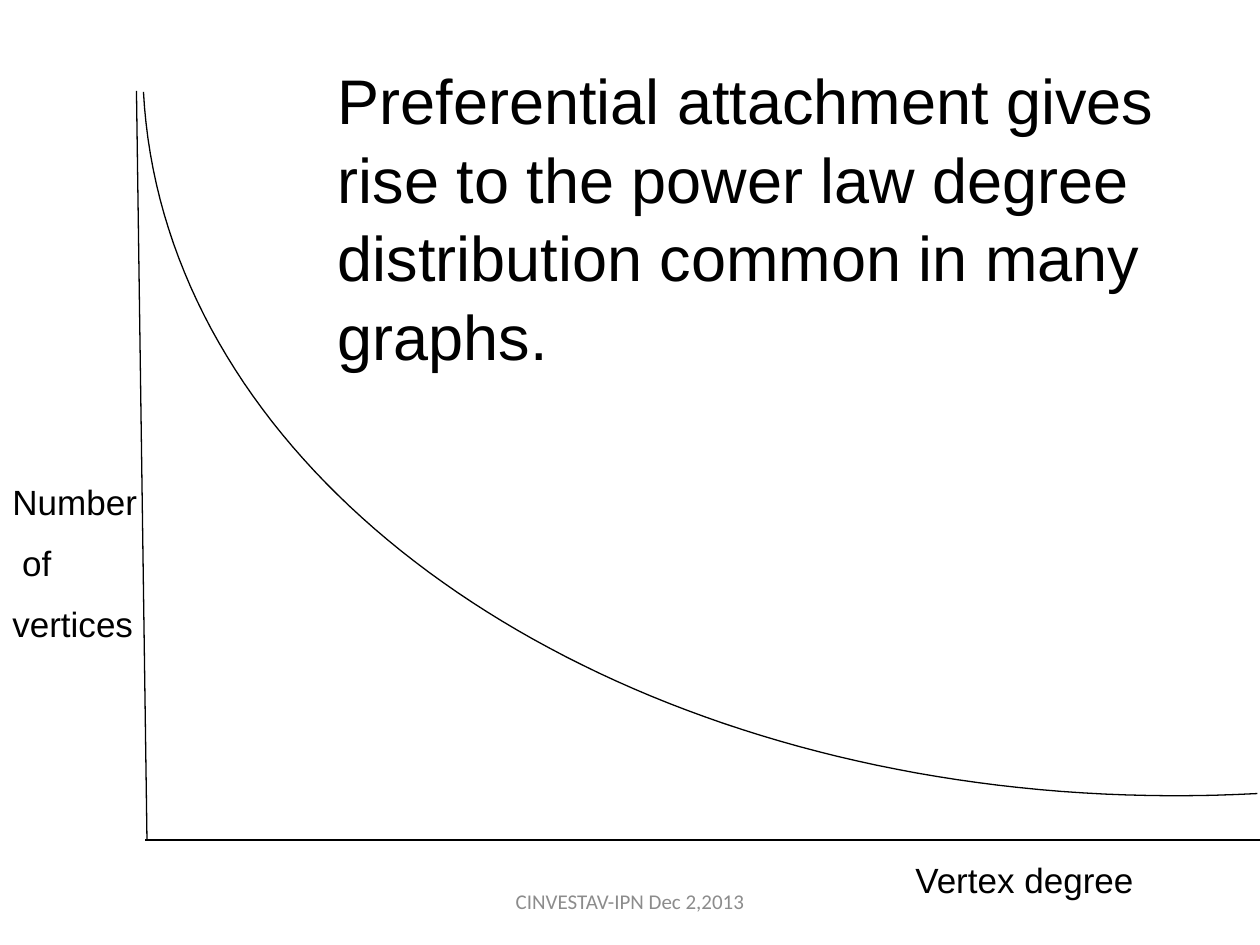
import dataclasses

import pptx
import pptx.dml.color
import pptx.enum.shapes
import pptx.enum.text
import pptx.oxml.ns
import pptx.util
from lxml import etree

Pt = pptx.util.Pt


@dataclasses.dataclass(frozen=True)
class Theme:
    """Colours, fonts and sizes of the slide."""
    ink: str = "000000"
    muted: str = "8C8C8C"
    body_font: str = "Arial"
    footer_font: str = "Calibri"
    statement_size: float = 36
    label_size: float = 20
    footer_size: float = 12
    line_width: float = 0.75
    leading: float = 1.04


THEME = Theme()


def colour(value):
    """Return the RGB colour for a hex value."""
    return pptx.dml.color.RGBColor.from_string(value)


def style_line(shape):
    """Give a shape the thin ink line."""
    shape.line.color.rgb = colour(THEME.ink)
    shape.line.width = Pt(THEME.line_width)


def add_text(page, box, lines, size):
    """Place left-aligned body text, one paragraph per line."""
    frame = page.shapes.add_textbox(*map(Pt, box)).text_frame
    frame.word_wrap = True
    for index, line in enumerate(lines):
        para = frame.add_paragraph() if index else frame.paragraphs[0]
        para.line_spacing = THEME.leading
        para.space_before = Pt(size / 2 if index else 0)
        span = para.add_run()
        span.text = line
        span.font.name = THEME.body_font
        span.font.size = Pt(size)
        span.font.color.rgb = colour(THEME.ink)


def add_axis(page, start, end):
    """Draw one straight axis."""
    axis = page.shapes.add_connector(
        pptx.enum.shapes.MSO_CONNECTOR.STRAIGHT, *map(Pt, start + end))
    style_line(axis)
    etree.SubElement(axis.element.spPr, pptx.oxml.ns.qn("a:effectLst"))


def add_curve(page, controls, steps=80):
    """Draw an open cubic curve through its four control points."""
    def point(t):
        weights = ((1 - t) ** 3, 3 * t * (1 - t) ** 2, 3 * t * t * (1 - t), t ** 3)
        return tuple(Pt(sum(w * c[axis] for w, c in zip(weights, controls)))
                     for axis in (0, 1))

    points = [point(step / steps) for step in range(steps + 1)]
    builder = page.shapes.build_freeform(*points[0])
    builder.add_line_segments(points[1:], close=False)
    curve = builder.convert_to_shape()
    curve.shadow.inherit = False
    curve.fill.background()
    style_line(curve)


def add_plot(page, box):
    """Draw the degree distribution with its axes and labels."""
    left, top, width, height = box
    right, bottom = left + width, top + height
    add_text(page, (right - 204, bottom + 6, 354, 31), ["Vertex degree"], THEME.label_size)
    add_text(page, (left - 78, top + 218, 138, 103),
             ["Number", " of", "vertices"], THEME.label_size)
    add_curve(page, [(right - 1.5, bottom - 26.5), (right - 340, bottom - 8.5),
                     (left + 17, bottom - 188), (left + 4, top + 0.5)])
    add_axis(page, (left, top), (left + 6, bottom))
    add_axis(page, (left + 5, bottom), (right, bottom))


def add_footer(page, box):
    """Place the centred footer."""
    frame = page.shapes.add_textbox(*map(Pt, box)).text_frame
    frame.word_wrap = True
    frame.vertical_anchor = pptx.enum.text.MSO_ANCHOR.MIDDLE
    para = frame.paragraphs[0]
    para.alignment = pptx.enum.text.PP_ALIGN.CENTER
    span = para.add_run()
    span.text = "CINVESTAV-IPN Dec 2,2013"
    span.font.name = THEME.footer_font
    span.font.size = Pt(THEME.footer_size)
    span.font.color.rgb = colour(THEME.muted)


def main():
    """Build and save the deck."""
    deck = pptx.Presentation()
    deck.slide_width, deck.slide_height = Pt(720), Pt(540)
    page = deck.slides.add_slide(deck.slide_layouts[6])
    add_plot(page, (78, 52, 642, 428))
    add_text(page, (186, 30, 534, 180),
             ["Preferential attachment gives rise to the power law degree "
              "distribution common in many graphs."], THEME.statement_size)
    add_footer(page, (246, 500.5, 228, 28.75))
    deck.save("out.pptx")


if __name__ == "__main__":
    main()
